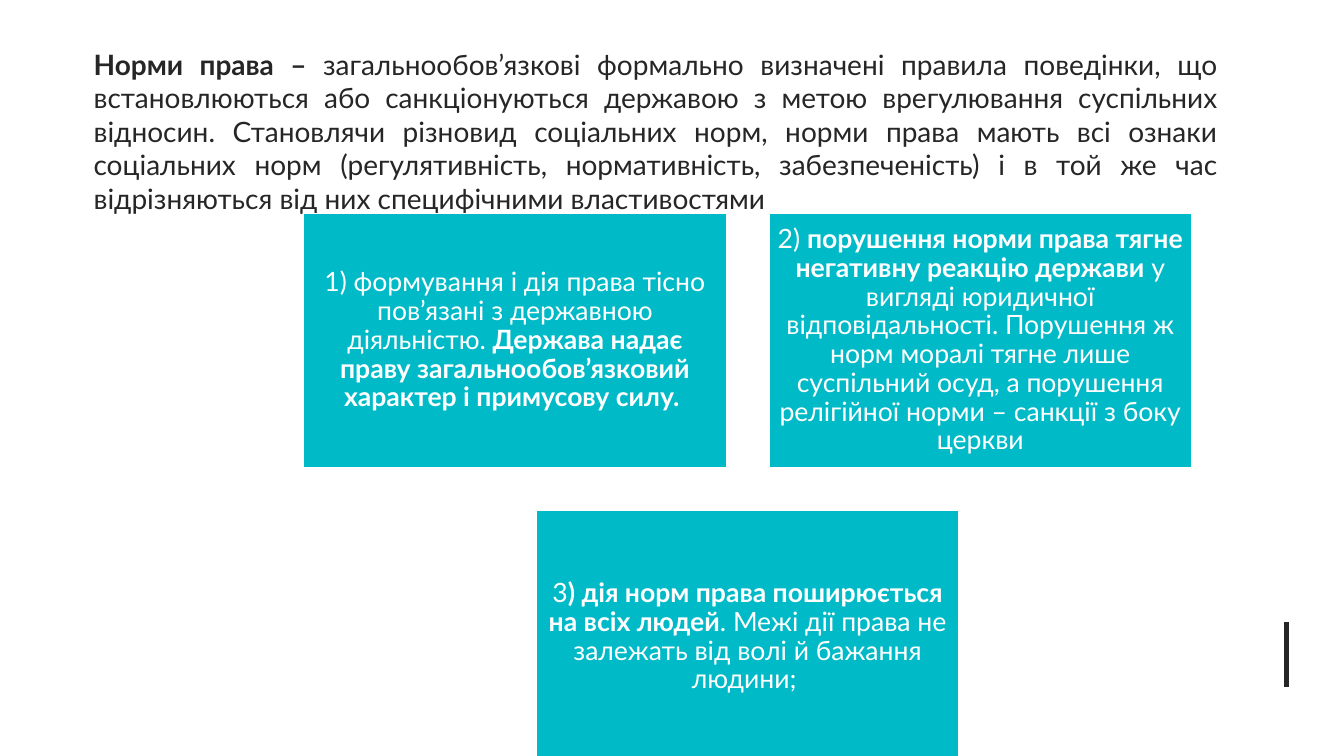
from pptx import Presentation
from pptx.dml.color import RGBColor
from pptx.enum.shapes import MSO_CONNECTOR, MSO_SHAPE
from pptx.enum.text import MSO_ANCHOR, PP_ALIGN
from pptx.util import Inches, Pt
from lxml import etree

LINE = MSO_CONNECTOR.STRAIGHT
RECT = MSO_SHAPE.RECTANGLE
MIDDLE = MSO_ANCHOR.MIDDLE
CENTER, JUSTIFY = PP_ALIGN.CENTER, PP_ALIGN.JUSTIFY
NS = "http://schemas.openxmlformats.org/drawingml/2006/main"
FONT, DARK, TEAL, WHITE = "Lato", "262626", "00BAC8", "FFFFFF"

TITLE = [
    ("Норми права – ", True),
    ("загальнообов’язкові формально визначені правила поведінки, що "
     "встановлюються або санкціонуються державою з метою врегулювання "
     "суспільних відносин. Становлячи різновид соціальних норм, норми права "
     "мають всі ознаки соціальних норм (регулятивність, нормативність, "
     "забезпеченість) і в той же час відрізняються від них специфічними "
     "властивостями", False),
]
CARDS = [
    [("1) формування і дія права тісно пов’язані з державною діяльністю. ", False),
     ("Держава надає праву загальнообов’язковий характер і примусову силу. ", True)],
    [("2) ", False),
     ("порушення норми права тягне негативну реакцію держави", True),
     (" у вигляді юридичної відповідальності. Порушення ж норм моралі тягне "
      "лише суспільний осуд, а порушення релігійної норми – санкції з боку "
      "церкви", False)],
    [("3", False),
     (") дія норм права поширюється на всіх людей", True),
     (". Межі дії права не залежать від волі й бажання людини; ", False)],
]


def color(code):
    """Return the colour for a hex string."""
    return RGBColor.from_string(code)


def write(frame, runs, size, ink, align):
    """Fill a text frame with one paragraph of plain and bold runs."""
    frame.word_wrap = True
    frame.vertical_anchor = MIDDLE
    para = frame.paragraphs[0]
    para.alignment = align
    para.font.name = FONT
    para.font.size = Pt(size)
    para.font.color.rgb = color(ink)
    for text, bold in runs:
        run = para.add_run()
        run.text = text
        run.font.bold = bold
    return para


def add_title(slide, left, top, width, height):
    """Place the justified definition in its box."""
    box = slide.shapes.add_textbox(
        Inches(left), Inches(top), Inches(width), Inches(height))
    box.text_frame.margin_bottom = Inches(0.38)
    write(box.text_frame, TITLE, 20, DARK, JUSTIFY)


def add_card(slide, runs, left, top, width, height):
    """Place one teal card with centred text."""
    card = slide.shapes.add_shape(
        RECT, Inches(left), Inches(top), Inches(width), Inches(height))
    card.shadow.inherit = False
    card.fill.solid()
    card.fill.fore_color.rgb = color(TEAL)
    card.line.color.rgb = color(WHITE)
    card.line.width = Pt(1)
    frame = card.text_frame
    frame.margin_left = frame.margin_right = Inches(0.08)
    frame.margin_top = frame.margin_bottom = Inches(0.08)
    para = write(frame, runs, 19, WHITE, CENTER)
    para.line_spacing = 0.9


def add_cards(slide, left, top, width, height):
    """Place two cards in a row and the third centred below."""
    gap = 0.42
    wide, high = (width - gap) / 2, (height - gap) / 2
    spots = [(0, 0), (wide + gap, 0), ((width - wide) / 2, high + gap)]
    for runs, (x, y) in zip(CARDS, spots):
        add_card(slide, runs, left + x, top + y, wide, high)


def add_mark(slide, left, top, height):
    """Draw the short upright line at the right edge."""
    mark = slide.shapes.add_connector(
        LINE, Inches(left), Inches(top), Inches(left), Inches(top + height))
    mark.line.color.rgb = color(DARK)
    mark.line.width = Pt(3)
    etree.SubElement(mark._element.spPr, f"{{{NS}}}effectLst")


def main():
    """Build and save the slide."""
    deck = Presentation()
    deck.slide_width, deck.slide_height = Inches(13.33), Inches(7.5)
    slide = deck.slides.add_slide(deck.slide_layouts[6])
    add_mark(slide, 12.76, 6.17, 0.65)
    add_title(slide, 0.83, 0.94, 11.35, 1.05)
    add_cards(slide, 3.01, 2.12, 8.81, 5.46)
    deck.save("out.pptx")


if __name__ == "__main__":
    main()
